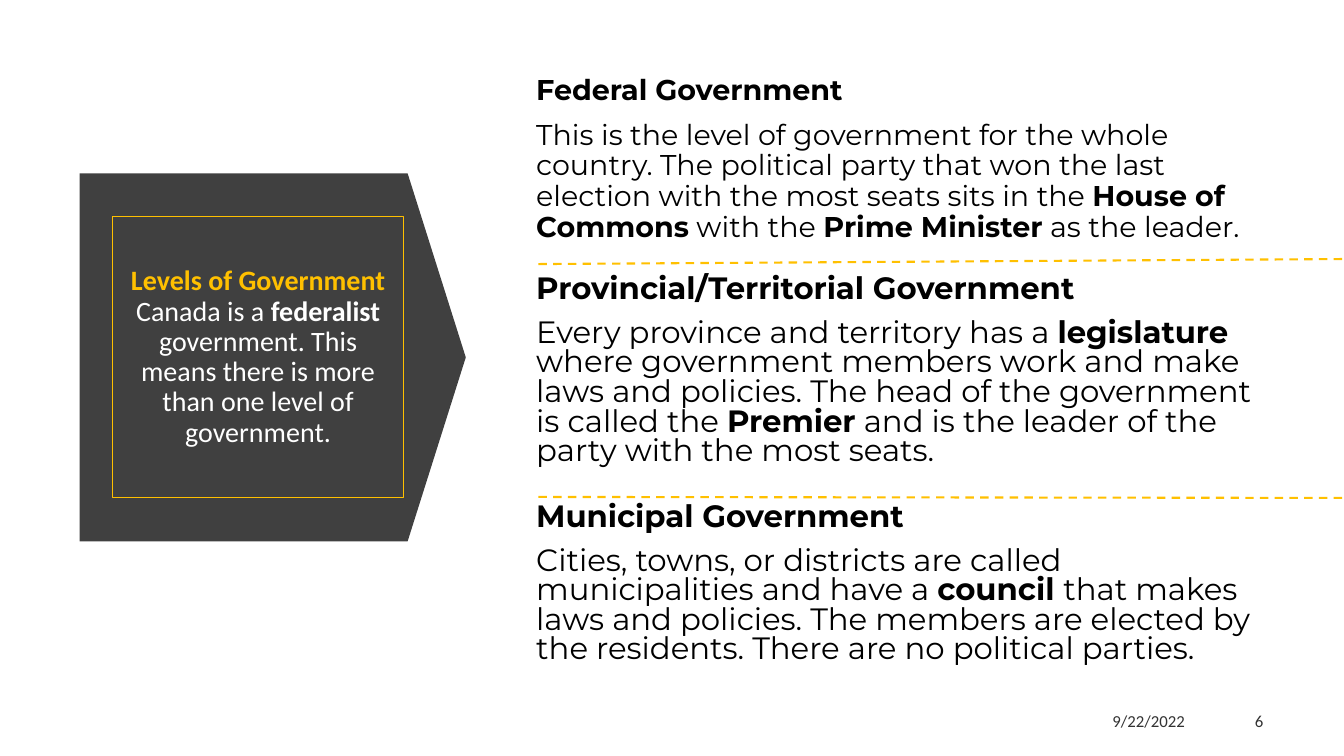
from pptx import Presentation
from pptx import util as u
from pptx.dml.color import RGBColor
from pptx.enum import dml, shapes, text
from pptx.oxml import xmlchemy as x

PX = 9144  # EMU per px, 100 px to the inch
SLIDE_W, SLIDE_H = 1333, 750

BLACK = RGBColor(0, 0, 0)
WHITE = RGBColor(255, 255, 255)
CHARCOAL = RGBColor(0x40, 0x40, 0x40)
FOOTER_GREY = RGBColor(0x33, 0x33, 0x33)
GOLD = RGBColor(0xFF, 0xC0, 0x00)

# Each level: box, text size, line spacing, heading, body runs (text, bold)
LEVELS = [
    ((522, 70, 741, 195), 20.4, 0.9, "Federal Government", [
        ("This is the level of government for the whole country. The political party "
         "that won the last election with the most seats sits in the ", False),
        ("House of Commons", True), (" with the ", False),
        ("Prime Minister", True), (" as the leader.", False)]),
    ((522, 269, 741, 214), 22, 0.8, "Provincial/Territorial Government", [
        ("Every province and territory has a ", False), ("legislature", True),
        (" where government members work and make laws and policies. "
         "The head of the government is called the ", False),
        ("Premier", True),
        (" and is the leader of the party with the most seats.", False)]),
    ((522, 495, 741, 185), 22, 0.8, "Municipal Government", [
        ("Cities, towns, or districts are called municipalities and have a ", False),
        ("council ", True),
        ("that makes laws and policies. The members are elected by the residents. "
         "There are no political parties.", False)]),
]
DIVIDERS = [(534, 262, SLIDE_W, 257), (534, 493, SLIDE_W, 494)]
FOOTERS = [((967, 695, 218, 40), "9/22/2022"), ((1207, 695, 56, 40), "6")]


def px(*lengths):
    return [u.Emu(n * PX) for n in lengths]


def add_run(p, words, font, size, color, bold=False):
    r = p.add_run()
    r.text = words
    r.font.name, r.font.size, r.font.bold = font, u.Pt(size), bold
    r.font.color.rgb = color


def add_text_frame(s, box):
    tf = s.shapes.add_textbox(*px(*box)).text_frame
    tf.word_wrap = True
    return tf


def add_title_panel(s, box):
    """Dark arrow pointing right, with the framed title on it."""
    left, top, width, height = box
    # The down arrow is turned a quarter, so its own width is the panel height.
    arrow = s.shapes.add_shape(
        shapes.MSO_SHAPE.DOWN_ARROW,
        *px(left + (width - height) // 2, top + (height - width) // 2, height, width))
    arrow.rotation = 270
    arrow.adjustments[0], arrow.adjustments[1] = 1, 0.158
    arrow.shadow.inherit = False
    arrow.fill.solid()
    arrow.fill.fore_color.rgb = CHARCOAL
    arrow.line.fill.background()

    title = s.shapes.title
    title.element.addprevious(arrow.element)
    title.left, title.top, title.width, title.height = px(left + 33, top + 43, 288, 279)
    title.line.color.rgb = GOLD
    title.line.width = u.Pt(0.75)
    tf = title.text_frame
    tf.word_wrap = True
    tf.auto_size = text.MSO_AUTO_SIZE.NONE
    tf.vertical_anchor = text.MSO_ANCHOR.MIDDLE
    p = tf.paragraphs[0]
    p.alignment = text.PP_ALIGN.CENTER
    p.line_spacing = 0.9
    add_run(p, "Levels of Government", "Calibri", 20, GOLD, True)
    p.add_line_break()
    for words, bold in [
            ("Canada is a ", False), ("federalist", True),
            (" government. This means there is more than one level of government.", False)]:
        add_run(p, words, "Calibri", 20, WHITE, bold)


def add_level(s, box, size, spacing, heading, body):
    tf = add_text_frame(s, box)
    p = tf.paragraphs[0]
    p.line_spacing = spacing
    add_run(p, heading, "Montserrat", size, BLACK, True)
    p = tf.add_paragraph()
    p.line_spacing = spacing
    p.space_before = u.Pt(10)
    for words, bold in body:
        add_run(p, words, "Montserrat", size, BLACK, bold)


def add_divider(s, ends):
    line = s.shapes.add_connector(shapes.MSO_CONNECTOR.STRAIGHT, *px(*ends))
    line.line.color.rgb = GOLD
    line.line.width = u.Pt(1.5)
    line.line.dash_style = dml.MSO_LINE.DASH
    properties = line.element.spPr
    properties.append(x.OxmlElement("a:effectLst"))


def add_footer(s, box, words):
    tf = add_text_frame(s, box)
    tf.vertical_anchor = text.MSO_ANCHOR.MIDDLE
    p = tf.paragraphs[0]
    p.alignment = text.PP_ALIGN.RIGHT
    p.space_after = u.Pt(6)
    add_run(p, words, "Calibri", 12, FOOTER_GREY)


def main():
    prs = Presentation()
    prs.slide_width, prs.slide_height = px(SLIDE_W, SLIDE_H)
    s = prs.slides.add_slide(prs.slide_layouts.get_by_name("Title Only"))
    add_title_panel(s, (79, 172, 383, 365))
    for level in LEVELS:
        add_level(s, *level)
    for box, words in FOOTERS:
        add_footer(s, box, words)
    for ends in DIVIDERS:
        add_divider(s, ends)
    prs.save("out.pptx")


if __name__ == "__main__":
    main()
